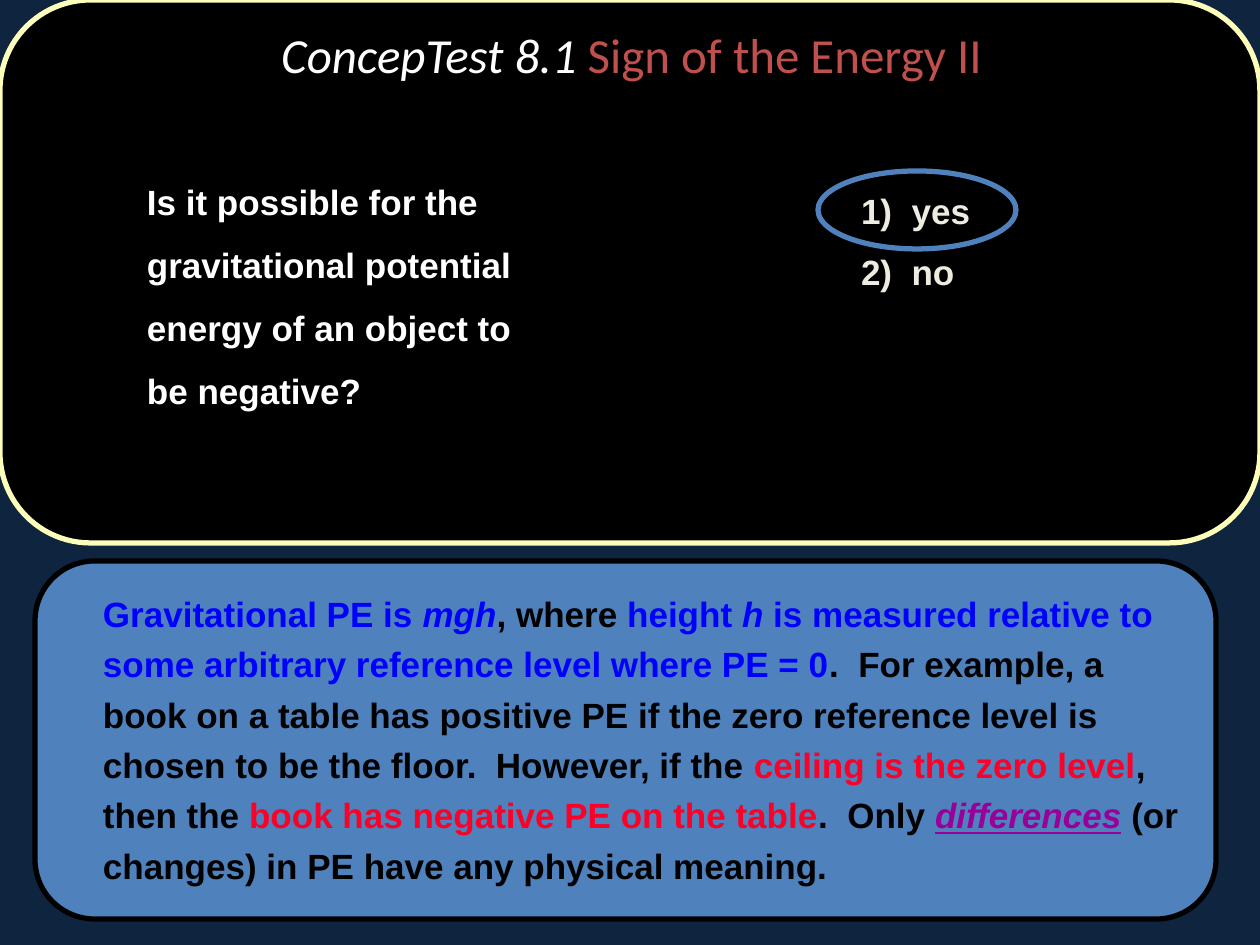
from dataclasses import dataclass

from pptx import Presentation
from pptx.dml.color import RGBColor
from pptx.enum.shapes import MSO_SHAPE
from pptx.enum.text import MSO_ANCHOR, PP_ALIGN
from pptx.util import Emu, Pt

ROUNDED = MSO_SHAPE.ROUNDED_RECTANGLE
ELLIPSE = MSO_SHAPE.OVAL
TOP, MIDDLE = MSO_ANCHOR.TOP, MSO_ANCHOR.MIDDLE
LEFT, CENTER = PP_ALIGN.LEFT, PP_ALIGN.CENTER

EMU_PER_PX = 914400 // 126
SLIDE_WIDTH, SLIDE_HEIGHT = 1260, 945
INSET_X, INSET_Y, INDENT = 13, 6, 55


def px(length):
    return Emu(round(length * 914400 / 126))


@dataclass(frozen=True)
class Theme:
    background: str = "0F243E"
    panel: str = "000000"
    panel_edge: str = "FCFEB9"
    accent: str = "4F81BD"
    white: str = "FFFFFF"
    cream: str = "EEECE1"
    title_red: str = "C0504D"
    ink: str = "010101"
    blue: str = "0000FF"
    red: str = "FC0128"
    purple: str = "990099"
    title_font: str = "Calibri"
    body_font: str = "Arial"
    title_size: int = 28
    body_size: int = 20
    line_width: int = 3


class SlideBuilder:
    def __init__(self, slide, theme):
        self.slide = slide
        self.theme = theme

    def background(self, color):
        fill = self.slide.background.fill
        fill.solid()
        fill.fore_color.rgb = RGBColor.from_string(color)

    def outline_shape(self, kind, box, line, fill=None):
        shape = self.slide.shapes.add_shape(kind, *map(px, box))
        shape.shadow.inherit = False
        if fill:
            shape.fill.solid()
            shape.fill.fore_color.rgb = RGBColor.from_string(fill)
        else:
            shape.fill.background()
        shape.line.color.rgb = RGBColor.from_string(line)
        shape.line.width = Pt(self.theme.line_width)

    def text(self, box, paragraphs, font, paragraph_format, indent=0, anchor=TOP):
        """Each paragraph is a list of (text, color, font values) runs."""
        frame = self.slide.shapes.add_textbox(*map(px, box)).text_frame
        frame_format = {
            "word_wrap": True, "vertical_anchor": anchor,
            "margin_left": px(INSET_X + indent), "margin_right": px(INSET_X),
            "margin_top": px(INSET_Y), "margin_bottom": px(INSET_Y),
        }
        self.apply(frame, frame_format)
        for index, runs in enumerate(paragraphs):
            paragraph = frame.add_paragraph() if index else frame.paragraphs[0]
            self.apply(paragraph, paragraph_format)
            for words, color, values in runs:
                run = paragraph.add_run()
                run.text = words
                self.apply(run.font, font | values)
                run.font.color.rgb = RGBColor.from_string(color)

    def body(self, box, paragraphs, line_spacing):
        font = {"name": self.theme.body_font, "size": Pt(self.theme.body_size), "bold": True}
        paragraph_format = {
            "alignment": LEFT, "line_spacing": line_spacing, "space_before": Pt(6),
        }
        self.text(box, paragraphs, font, paragraph_format, indent=INDENT)

    def title(self, box, runs):
        font = {"name": self.theme.title_font, "size": Pt(self.theme.title_size)}
        paragraph_format = {"alignment": CENTER, "line_spacing": 0.9}
        self.text(box, [runs], font, paragraph_format, anchor=MIDDLE)

    @staticmethod
    def apply(target, values):
        for name, value in values.items():
            setattr(target, name, value)


def main():
    presentation = Presentation()
    presentation.slide_width = px(SLIDE_WIDTH)
    presentation.slide_height = px(SLIDE_HEIGHT)
    theme = Theme()
    builder = SlideBuilder(presentation.slides.add_slide(presentation.slide_layouts[6]), theme)
    italic = {"italic": True}

    builder.background(theme.background)
    builder.outline_shape(ROUNDED, (35, 561, 1181, 358), theme.panel, theme.accent)
    builder.outline_shape(ROUNDED, (0, 0, SLIDE_WIDTH, 543), theme.panel_edge, theme.panel)

    question = "Is it possible for the gravitational potential energy of an object to be negative?"
    builder.body((79, 154, 490, 263), [[(question, theme.white, {})]], 1.5)

    answers = ["1)  yes", "2)  no"]
    builder.body((793, 175, 310, 282), [[(answer, theme.cream, {})] for answer in answers], 1.2)

    explanation = [
        ("Gravitational PE is ", theme.blue, {}),
        ("mgh", theme.blue, italic),
        (", where ", theme.ink, {}),
        ("height ", theme.blue, {}),
        ("h", theme.blue, italic),
        (" is measured relative to some arbitrary reference level where PE = 0", theme.blue, {}),
        (".  For example, a book on a table has positive PE if the zero reference level "
         "is chosen to be the floor.  However, if the ", theme.ink, {}),
        ("ceiling is the zero level", theme.red, {}),
        (", then the ", theme.ink, {}),
        ("book has negative PE on the table", theme.red, {}),
        (".  Only ", theme.ink, {}),
        ("differences", theme.purple, italic | {"underline": True}),
        (" (or changes) in PE have any physical meaning.", theme.ink, {}),
    ]
    builder.body((35, 578, 1162, 200), [explanation], 1.2)

    builder.outline_shape(ELLIPSE, (818, 171, 198, 78), theme.accent)
    builder.title((129, 0, 1005, 116), [
        ("ConcepTest 8.1 ", theme.white, italic),
        ("Sign of the Energy II", theme.title_red, {}),
    ])
    presentation.save("out.pptx")


if __name__ == "__main__":
    main()
